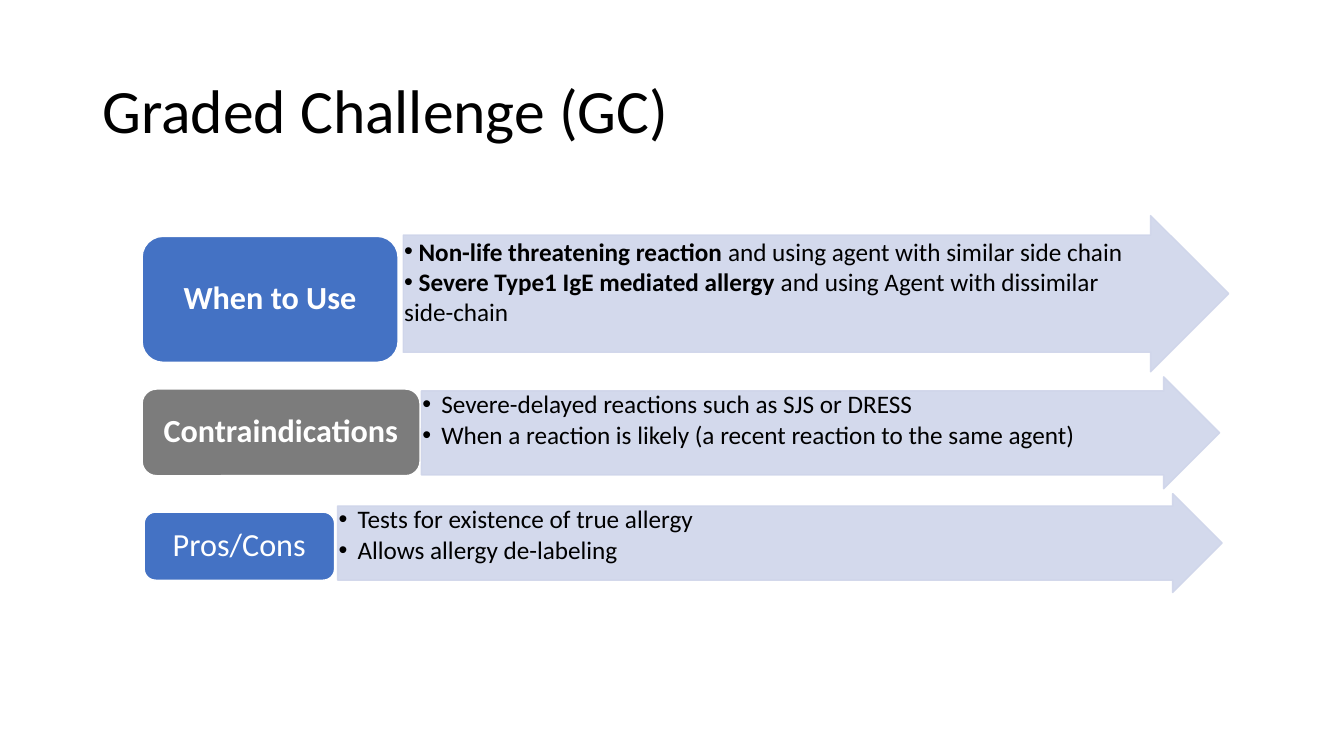
import pptx
import pptx.util
import pptx.dml.color
import pptx.enum.shapes
import pptx.enum.text
import pptx.oxml.ns
from lxml import etree

Pt = pptx.util.Pt
SHAPE = pptx.enum.shapes.MSO_SHAPE
ALIGN = pptx.enum.text.PP_ALIGN
ANCHOR = pptx.enum.text.MSO_ANCHOR
qn = pptx.oxml.ns.qn


def color(hex_string):
    return pptx.dml.color.RGBColor.from_string(hex_string)


class Deck:
    font = "Calibri"
    black, white = "000000", "FFFFFF"
    blue, gray, pale = "4472C4", "7C7C7C", "CFD5EA"
    title_size, label_size, list_size = 44, 23, 18

    def __init__(self, width, height):
        self.prs = pptx.Presentation()
        self.prs.slide_width, self.prs.slide_height = Pt(width), Pt(height)
        self.s = self.prs.slides.add_slide(self.prs.slide_layouts[5])

    def run(self, p, text, size, hex_string, bold=False):
        r = p.add_run()
        r.text = text
        r.font.name, r.font.size, r.font.bold = self.font, Pt(size), bold
        r.font.color.rgb = color(hex_string)

    def title(self, text, x, y, w, h):
        sp = self.s.shapes.title
        sp.left, sp.top, sp.width, sp.height = Pt(x), Pt(y), Pt(w), Pt(h)
        tf = sp.text_frame
        tf.vertical_anchor = ANCHOR.MIDDLE
        p = tf.paragraphs[0]
        p.alignment, p.line_spacing = ALIGN.LEFT, 0.9
        self.run(p, text, self.title_size, self.black)

    def shape(self, kind, box, fill, line):
        sp = self.s.shapes.add_shape(kind, *(Pt(v) for v in box))
        sp.shadow.inherit = False
        sp.fill.solid()
        sp.fill.fore_color.rgb = color(fill)
        sp.line.color.rgb = color(line)
        sp.line.width = Pt(1)
        sp.text_frame.word_wrap = True
        return sp

    def label(self, text, box, fill, bold):
        sp = self.shape(SHAPE.ROUNDED_RECTANGLE, box, fill, self.white)
        tf = sp.text_frame
        tf.vertical_anchor = ANCHOR.MIDDLE
        p = tf.paragraphs[0]
        p.alignment, p.line_spacing = ALIGN.CENTER, 0.9
        self.run(p, text, self.label_size, self.white, bold)

    def bullet(self, p, indent):
        pPr = p._p.get_or_add_pPr()
        pPr.set("marL", str(Pt(indent)))
        pPr.set("indent", str(-Pt(indent)))
        etree.SubElement(pPr, qn("a:buFont")).set("typeface", "Arial")
        etree.SubElement(pPr, qn("a:buChar")).set("char", "•")

    def arrow(self, items, box, indent):
        """Draw a translucent arrow holding a list; each item is (text, bold) runs."""
        sp = self.shape(SHAPE.RIGHT_ARROW, box, self.pale, self.pale)
        sp.adjustments[0], sp.adjustments[1] = 0.75, 0.5
        for clr in sp._element.spPr.iter(qn("a:srgbClr")):
            etree.SubElement(clr, qn("a:alpha")).set("val", "90000")
        tf = sp.text_frame
        tf.vertical_anchor = ANCHOR.TOP
        tf.margin_left = tf.margin_top = tf.margin_bottom = Pt(0.72)
        tf.margin_right = Pt(box[3] / 4 + 0.72)  # keeps text out of the arrowhead
        for i, runs in enumerate(items):
            p = tf.add_paragraph() if i else tf.paragraphs[0]
            p.alignment = ALIGN.LEFT
            if indent:
                p.line_spacing, p.space_after = 0.9, Pt(2.7)
            self.bullet(p, indent)
            for text, bold in runs:
                self.run(p, text, self.list_size, self.black, bold)


def main():
    d = Deck(960, 540)
    d.title("Graded Challenge (GC)", 66, 28.8, 828, 104.4)
    rows = [
        ("When to Use", True, d.blue, (101.5, 168.8, 182.9, 90),
         (288, 154, 589.7, 111.6), 0,
         [[(" Non-life threatening reaction ", True),
           ("and using agent with similar side chain", False)],
          [(" Severe Type1 IgE mediated allergy ", True),
           ("and using Agent with dissimilar side-chain", False)]]),
        ("Contraindications", True, d.gray, (101.5, 277.9, 198.5, 61.9),
         (301, 269.2, 570.2, 80), 13.5,
         [[("Severe-delayed reactions such as SJS or DRESS", False)],
          [("When a reaction is likely (a recent reaction to the same agent)", False)]]),
        ("Pros/Cons", False, d.blue, (103, 365.8, 136, 48.6),
         (241.2, 352.6, 631.8, 70.6), 13.5,
         [[("Tests for existence of true allergy", False)],
          [("Allows allergy de-labeling", False)]]),
    ]
    for label, bold, fill, label_box, arrow_box, indent, items in rows:
        d.arrow(items, arrow_box, indent)
        d.label(label, label_box, fill, bold)
    d.prs.save("out.pptx")


if __name__ == "__main__":
    main()
